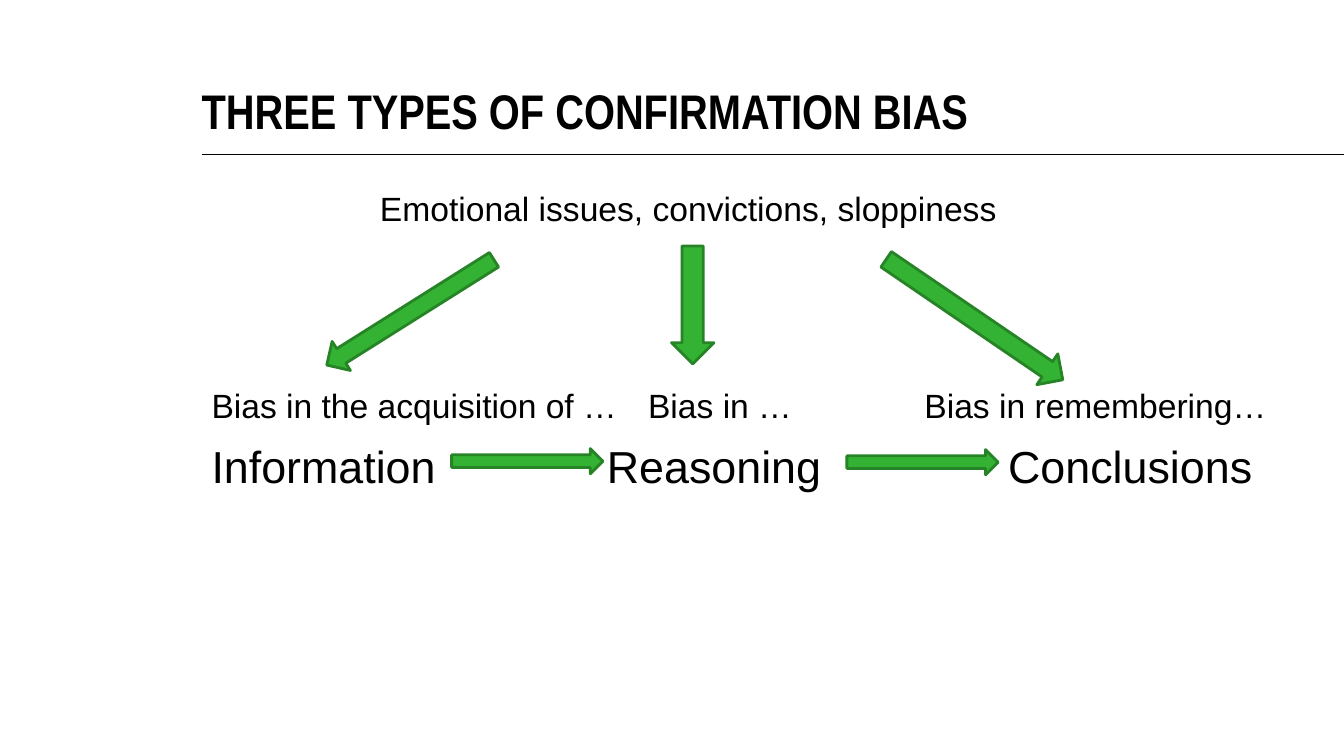
import pptx
import pptx.dml.color
import pptx.enum.shapes
import pptx.enum.text
import pptx.util
from lxml import etree
from pptx.util import Inches

TITLE = "THREE TYPES OF CONFIRMATION BIAS"
BLACK, GREEN, DARK_GREEN = "000000", "34B233", "268426"
MARGIN, RULE_Y, SLIDE_W = 2, 1.53, 13.33

# text, left, width
STAGES = [("Information", 2, 2.73), ("Reasoning", 5.92, 2.48), ("Conclusions", 9.9, 2.85)]
BIASES = [
    ("Bias in the acquisition of …", 2, 4.36),
    ("Bias in …", 6.33, 1.74),
    ("Bias in remembering…", 9.07, 3.72),
]
CAUSE = ("Emotional issues, convictions, sloppiness", 3.67, 6.38)
STAGE_Y, BIAS_Y, CAUSE_Y = 4.3, 3.77, 1.82

# left, top, width, height, rotation
STAGE_ARROWS = [(4.48, 4.45, 1.5, 0.25, 0), (8.4, 4.46, 1.5, 0.25, 0)]
CAUSE_ARROWS = [
    (3.9, 2.12, 0.34, 1.96, 57.8),
    (9.48, 2.11, 0.37, 2.12, 304.3),
    (6.66, 2.44, 0.42, 1.17, 0),
]


def rgb(value):
    return pptx.dml.color.RGBColor.from_string(value)


def add_run(p, text, size, font="Arial", bold=False):
    r = p.add_run()
    r.text = text
    r.font.name, r.font.size, r.font.bold = font, pptx.util.Pt(size), bold
    r.font.color.rgb = rgb(BLACK)


def add_label(s, label, top, height, size, wrap=False):
    text, left, width = label
    tf = s.shapes.add_textbox(Inches(left), Inches(top), Inches(width), Inches(height)).text_frame
    tf.word_wrap = wrap
    tf.auto_size = pptx.enum.text.MSO_AUTO_SIZE.SHAPE_TO_FIT_TEXT
    add_run(tf.paragraphs[0], text, size)


def add_arrow(s, kind, box):
    *frame, rotation = box
    sp = s.shapes.add_shape(kind, *map(Inches, frame))
    sp.rotation = rotation
    sp.shadow.inherit = False
    sp.fill.solid()
    sp.fill.fore_color.rgb = rgb(GREEN)
    sp.line.color.rgb = rgb(DARK_GREEN)
    sp.line.width = pptx.util.Pt(2)


def add_heading(s):
    """Draw the title and the rule under it."""
    rule = s.shapes.add_connector(
        pptx.enum.shapes.MSO_CONNECTOR.STRAIGHT,
        Inches(MARGIN), Inches(RULE_Y), Inches(SLIDE_W), Inches(RULE_Y))
    rule.line.color.rgb = rgb(BLACK)
    rule.line.width = pptx.util.Pt(1)
    etree.SubElement(rule._element.spPr, pptx.oxml.ns.qn("a:effectLst"))

    tf = s.shapes.add_textbox(Inches(MARGIN), Inches(0.58), Inches(10.92), Inches(0.8)).text_frame
    tf.word_wrap = True
    tf.margin_left = tf.margin_right = tf.margin_top = tf.margin_bottom = 0
    tf.vertical_anchor = pptx.enum.text.MSO_ANCHOR.BOTTOM
    p = tf.paragraphs[0]
    p.line_spacing = pptx.util.Pt(33.3)
    add_run(p, TITLE, 34.7, "Arial Narrow", True)


def main():
    prs = pptx.Presentation()
    prs.slide_width, prs.slide_height = Inches(SLIDE_W), Inches(7.5)
    s = prs.slides.add_slide(prs.slide_layouts[6])
    shape = pptx.enum.shapes.MSO_SHAPE

    add_heading(s)
    for stage in STAGES:
        add_label(s, stage, STAGE_Y, 0.64, 32, wrap=True)
    for box in STAGE_ARROWS:
        add_arrow(s, shape.RIGHT_ARROW, box)
    for bias in BIASES:
        add_label(s, bias, BIAS_Y, 0.5, 24)
    for box in CAUSE_ARROWS:
        add_arrow(s, shape.DOWN_ARROW, box)
    add_label(s, CAUSE, CAUSE_Y, 0.5, 24)
    prs.save("out.pptx")


if __name__ == "__main__":
    main()
